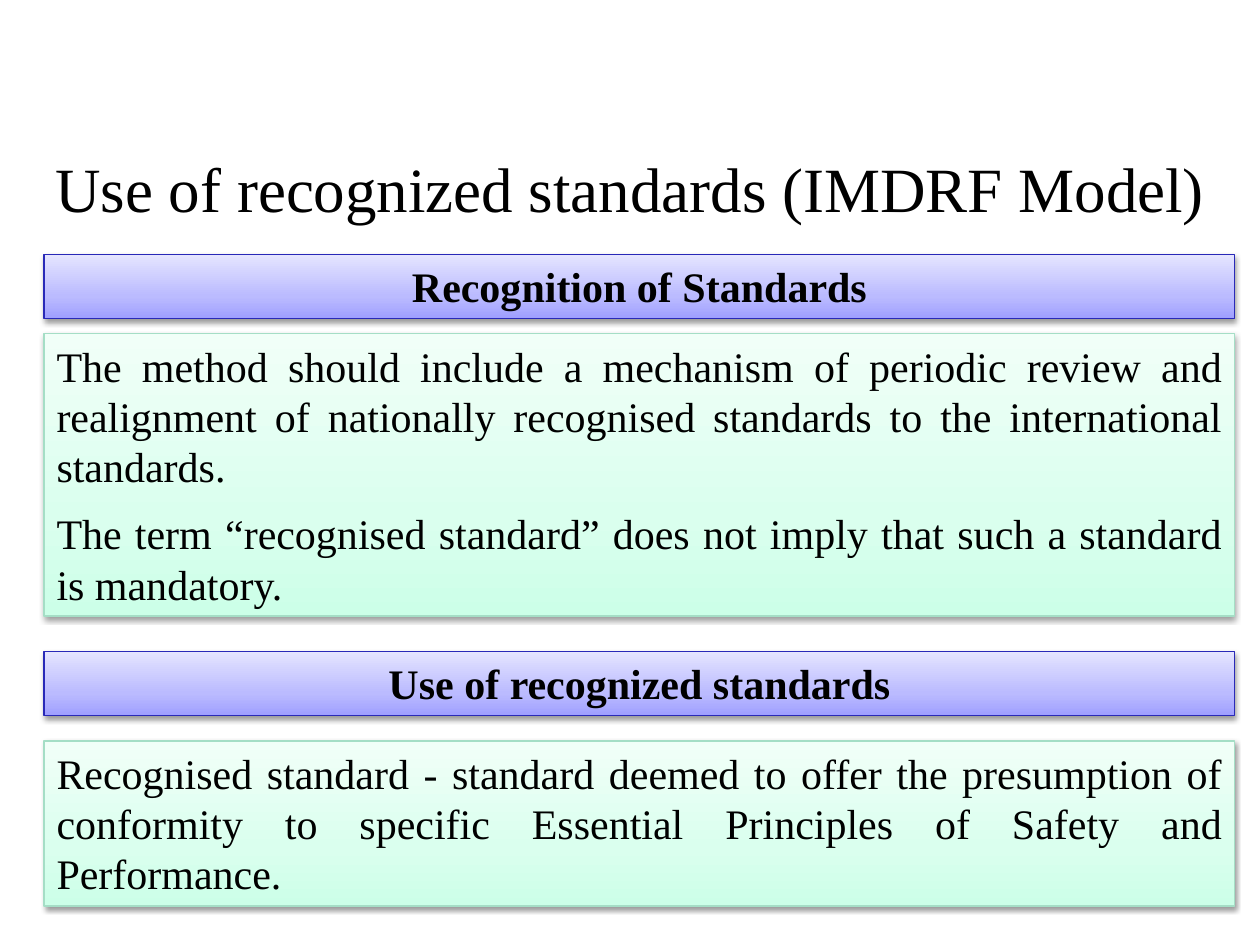
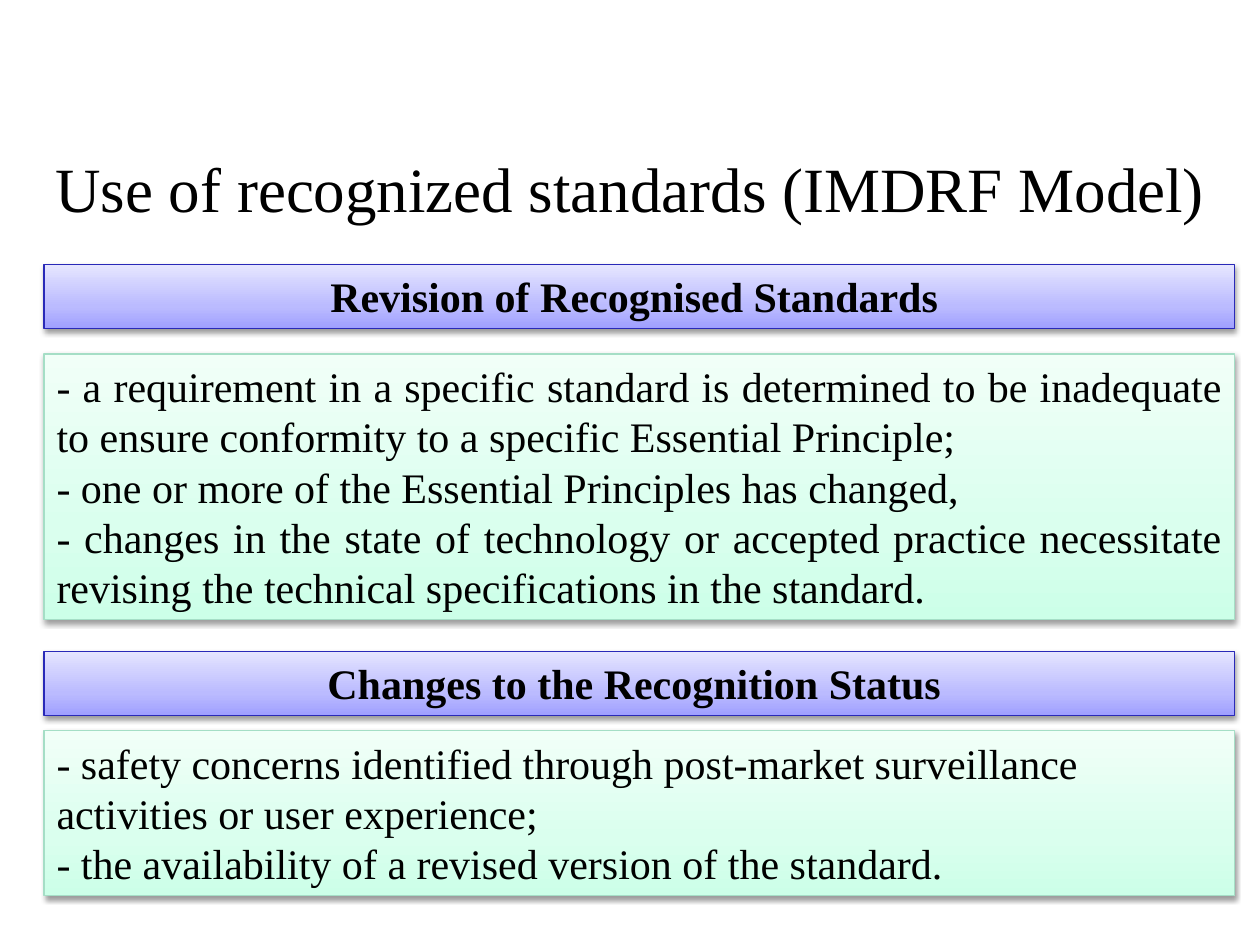
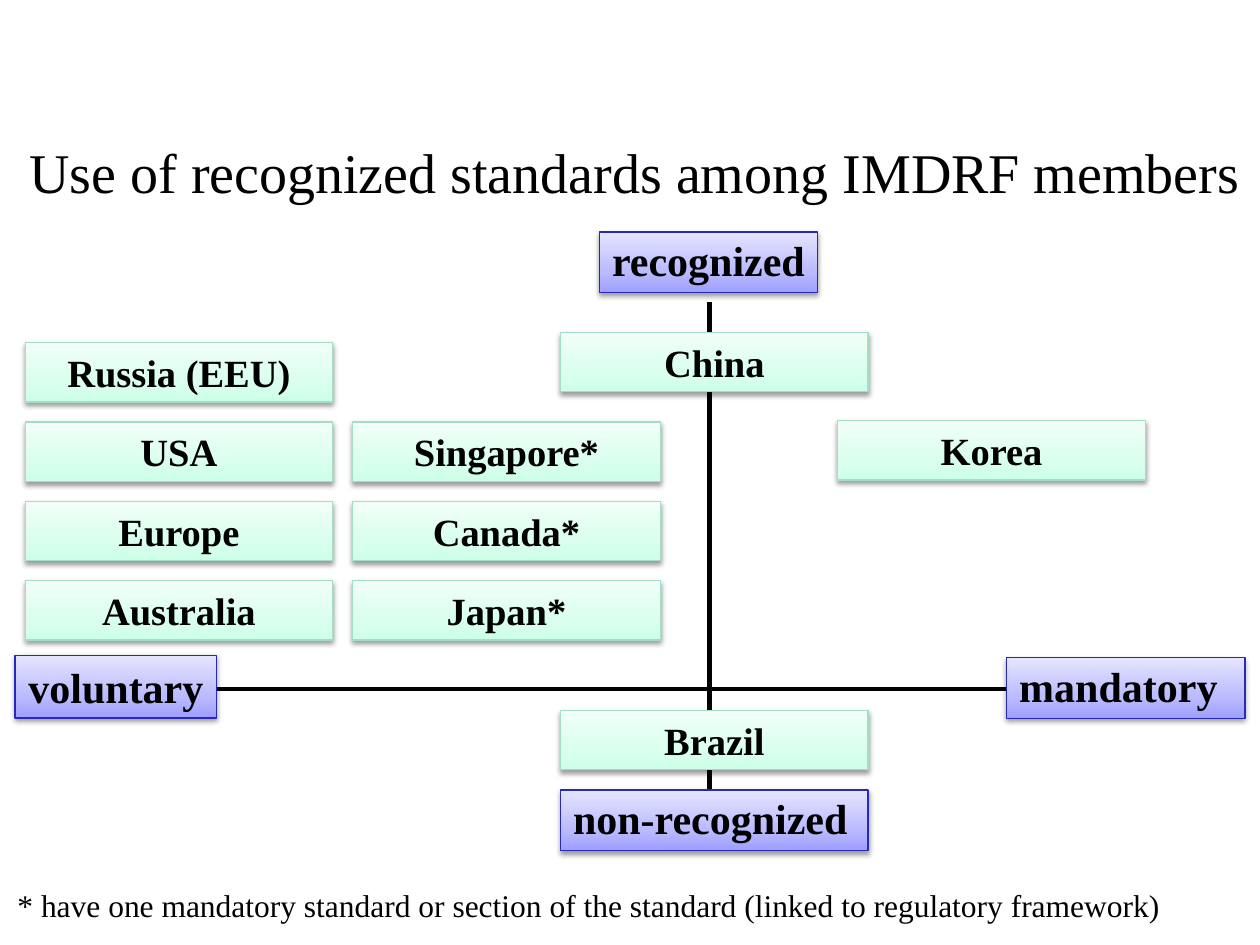
import copy

import lxml.etree
import pptx
import pptx.dml.color
import pptx.enum.shapes
import pptx.enum.text
import pptx.oxml.ns
import pptx.util

Inches = pptx.util.Inches
Pt = pptx.util.Pt
RGBColor = pptx.dml.color.RGBColor
Align = pptx.enum.text.PP_ALIGN
AutoSize = pptx.enum.text.MSO_AUTO_SIZE
Anchor = pptx.enum.text.MSO_ANCHOR
qn = pptx.oxml.ns.qn

BLACK = RGBColor(0x00, 0x00, 0x00)
VIOLET = {
    "stops": [(0, RGBColor(0x9F, 0x9F, 0xFF)), (0.35, RGBColor(0xBB, 0xBB, 0xFF)),
              (1, RGBColor(0xE5, 0xE5, 0xFF))],
    "line": RGBColor(0x29, 0x29, 0xB8),
}
MINT = {
    "stops": [(0, RGBColor(0xCC, 0xFF, 0xE8)), (0.35, RGBColor(0xDA, 0xFF, 0xEE)),
              (1, RGBColor(0xF1, 0xFF, 0xF8))],
    "line": RGBColor(0xA5, 0xDE, 0xC6),
}

FONT = {"name": "Times New Roman", "bold": False}
HEADING = {"size": Pt(24), "bold": True}
BODY = {"size": Pt(24)}
MEMBER = {"size": Pt(22), "bold": True}
NOTE = {"size": Pt(18)}
CENTERED = {"alignment": Align.CENTER}
JUSTIFIED = {"alignment": Align.JUSTIFY}
AXIS_LABEL = {"alignment": Align.JUSTIFY, "line_spacing": 0.95}

MODEL_TITLE = "Use of recognized standards (IMDRF Model)"
SECTION_LEFT, SECTION_WIDTH, BAND_HEIGHT = 0.35, 9.45, 0.51
MODEL_PAGES = [
    [
        {"heading": "Recognition of Standards", "top": 2.02,
         "body_top": 2.65, "body_height": 2.24, "format": JUSTIFIED, "gap": 9.4,
         "lines": [
             "The method should include a mechanism of periodic review and realignment of "
             "nationally recognised standards to the international standards. ",
             "The term “recognised standard” does not imply that such a standard is mandatory.",
         ]},
        {"heading": "Use of recognized standards", "top": 5.17,
         "body_top": 5.88, "body_height": 1.31, "format": JUSTIFIED, "gap": 0,
         "lines": [
             "Recognised standard - standard deemed to offer the presumption of conformity to "
             "specific Essential Principles of Safety and Performance.",
         ]},
    ],
    [
        {"heading": "Revision of Recognised Standards ", "top": 2.1,
         "body_top": 2.81, "body_height": 2.11, "format": JUSTIFIED, "gap": 0,
         "lines": [
             "- a requirement in a specific standard is determined to be inadequate to ensure "
             "conformity to a specific Essential Principle;",
             "- one or more of the Essential Principles has changed,",
             "- changes in the state of technology or accepted practice necessitate revising "
             "the technical specifications in the standard.",
         ]},
        {"heading": "Changes to the Recognition Status ", "top": 5.17,
         "body_top": 5.8, "body_height": 1.31, "format": {"alignment": Align.LEFT}, "gap": 0,
         "lines": [
             "- safety concerns identified through post-market surveillance activities or "
             "user experience;",
             "- the availability of a revised version of the standard.",
         ]},
    ],
]

MEMBERS_TITLE = "Use of recognized standards among IMDRF members"
MEMBERS_NOTE = ("* have one mandatory standard or section of the standard "
                "(linked to regulatory framework)")
AXES = [((5.63, 2.4), (5.63, 6.65), 3), ((0.83, 5.47), (9.33, 5.47), 2.25)]
AXIS_ENDS = [
    ("recognized ", (4.76, 1.84, 1.73, 0.48), AXIS_LABEL, True),
    ("non-recognized ", (4.45, 6.27, 2.44, 0.48), AXIS_LABEL, True),
    ("mandatory ", (7.99, 5.22, 1.89, 0.48), AXIS_LABEL, True),
    ("voluntary", (0.12, 5.2, 1.6, 0.5), CENTERED, False),
]
MEMBER_WIDTH, MEMBER_HEIGHT, MEMBER_PITCH = 2.44, 0.47, 0.63
MEMBER_COLUMNS = [
    (0.2, 2.72, ["Russia (EEU)", "USA", "Europe", "Australia"]),
    (2.8, 3.35, ["Singapore*", "Canada*", "Japan*"]),
    (4.45, 2.64, ["China"]),
    (4.45, 5.64, ["Brazil"]),
    (6.65, 3.34, ["Korea"]),
]


def apply(target, values):
    for name, value in values.items():
        setattr(target, name, value)


def write(frame, lines, font, layout, gap=0):
    for index, line in enumerate(lines):
        para = frame.add_paragraph() if index else frame.paragraphs[0]
        apply(para, layout)
        if index:
            para.space_before = Pt(gap)
        span = para.add_run()
        span.text = line
        apply(span.font, FONT | font)
        span.font.color.rgb = BLACK


def add_page(deck, title, size, left, top):
    page = deck.slides.add_slide(deck.slide_layouts[5])
    box = page.shapes.title
    apply(box, {"left": Inches(left), "top": Inches(top),
                "width": deck.slide_width, "height": Inches(1)})
    apply(box.text_frame, {"auto_size": AutoSize.NONE, "word_wrap": True,
                           "vertical_anchor": Anchor.MIDDLE})
    write(box.text_frame, [title], {"size": Pt(size)}, CENTERED)
    return page


def add_shadow(box):
    box.shadow.inherit = False
    effects = box._element.spPr.find(qn("a:effectLst"))
    shadow = lxml.etree.SubElement(effects, qn("a:outerShdw"), {
        "blurRad": str(Pt(3.1)), "dist": str(Pt(1.6)), "dir": "5400000", "rotWithShape": "0"})
    color = lxml.etree.SubElement(shadow, qn("a:srgbClr"), val=str(BLACK))
    lxml.etree.SubElement(color, qn("a:alpha"), val="38000")


def add_panel(page, place, palette, lines, font, layout, gap=0, wrap=True):
    box = page.shapes.add_shape(pptx.enum.shapes.MSO_SHAPE.RECTANGLE, *map(Inches, place))
    box.fill.gradient()
    box.fill.gradient_angle = 90
    stop_list = box._element.spPr.find(".//" + qn("a:gsLst"))
    stop_list.append(copy.deepcopy(stop_list[-1]))
    for stop, (position, color) in zip(box.fill.gradient_stops, palette["stops"]):
        stop.position = position
        stop.color.rgb = color
    box.line.color.rgb = palette["line"]
    box.line.width = Pt(0.75)
    add_shadow(box)
    apply(box.text_frame, {"word_wrap": wrap, "vertical_anchor": Anchor.TOP,
                           "auto_size": AutoSize.SHAPE_TO_FIT_TEXT})
    write(box.text_frame, lines, font, layout, gap)


def add_axis(page, start, end, weight):
    axis = page.shapes.add_connector(pptx.enum.shapes.MSO_CONNECTOR.STRAIGHT,
                                     *map(Inches, start + end))
    axis.line.color.rgb = BLACK
    axis.line.width = Pt(weight)
    lxml.etree.SubElement(axis._element.spPr, qn("a:effectLst"))


def add_model_page(deck, sections):
    page = add_page(deck, MODEL_TITLE, 36, 0, 0.99)
    for section in sections:
        band = (SECTION_LEFT, section["top"], SECTION_WIDTH, BAND_HEIGHT)
        body = (SECTION_LEFT, section["body_top"], SECTION_WIDTH, section["body_height"])
        add_panel(page, band, VIOLET, [section["heading"]], HEADING, CENTERED)
        add_panel(page, body, MINT, section["lines"], BODY, section["format"], section["gap"])


def add_members_page(deck):
    page = add_page(deck, MEMBERS_TITLE, 32, 0.04, 0.86)
    for axis in AXES:
        add_axis(page, *axis)
    for label, place, layout, wrap in AXIS_ENDS:
        add_panel(page, place, VIOLET, [label], HEADING, layout, wrap=wrap)
    for left, top, members in MEMBER_COLUMNS:
        for row, member in enumerate(members):
            place = (left, top + row * MEMBER_PITCH, MEMBER_WIDTH, MEMBER_HEIGHT)
            add_panel(page, place, MINT, [member], MEMBER, CENTERED)
    note = page.shapes.add_textbox(*map(Inches, (0.04, 6.98, 10, 0.4)))
    apply(note.text_frame, {"word_wrap": True, "auto_size": AutoSize.SHAPE_TO_FIT_TEXT})
    write(note.text_frame, [MEMBERS_NOTE], NOTE, {"alignment": Align.LEFT})


def main():
    deck = pptx.Presentation()
    apply(deck, {"slide_width": Inches(10), "slide_height": Inches(7.5)})
    for sections in MODEL_PAGES:
        add_model_page(deck, sections)
    add_members_page(deck)
    deck.save("out.pptx")


if __name__ == "__main__":
    main()
